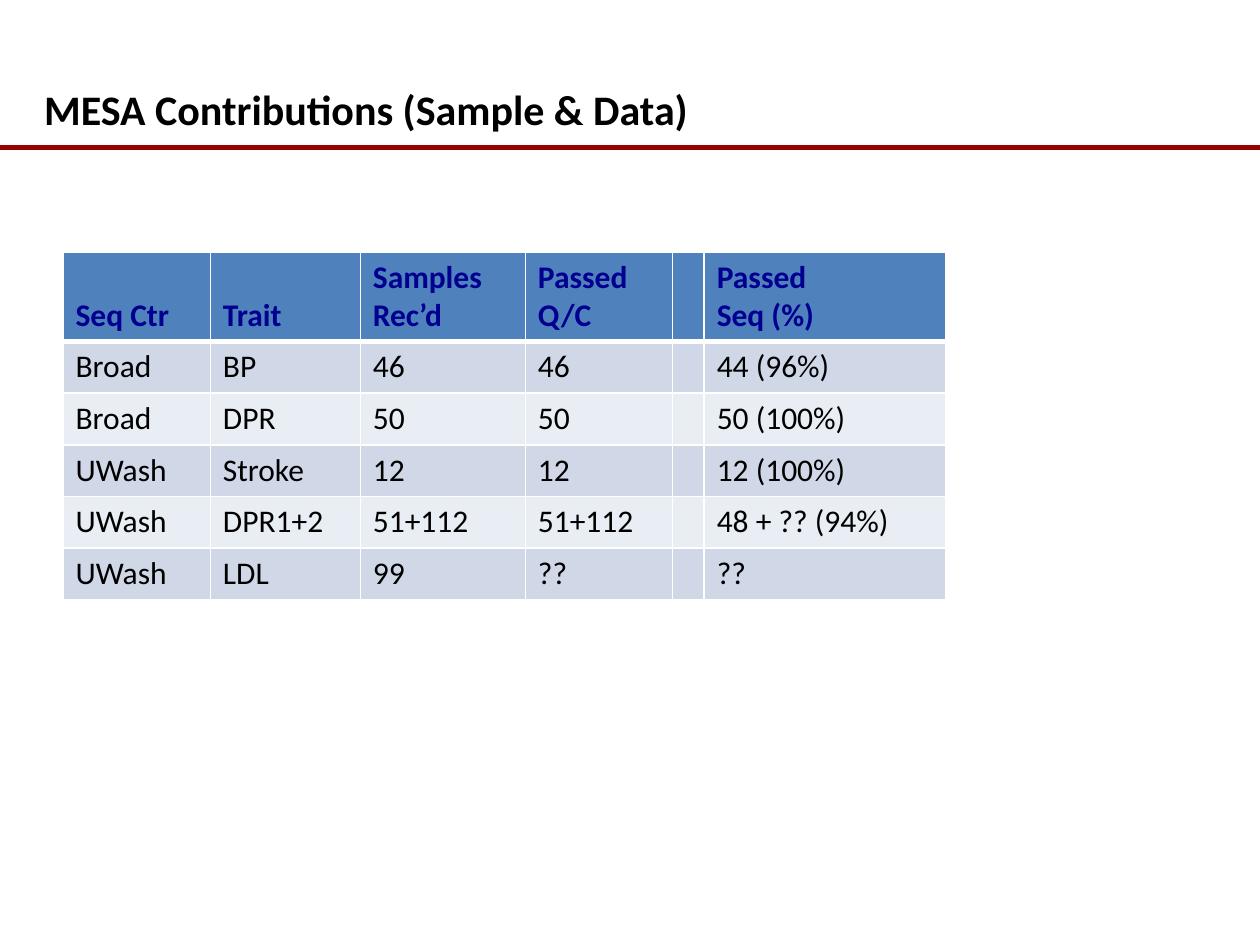
from pptx import Presentation
from pptx.dml.color import RGBColor
from pptx.enum.shapes import MSO_CONNECTOR
from pptx.enum.text import MSO_ANCHOR, PP_ALIGN
from pptx.oxml.ns import qn
from pptx.util import Inches, Pt
from lxml.etree import SubElement

BLACK = RGBColor(0x00, 0x00, 0x00)
WHITE = RGBColor(0xFF, 0xFF, 0xFF)
RED = RGBColor(0x99, 0x00, 0x00)
NAVY = RGBColor(0x00, 0x00, 0x90)
HEADER = RGBColor(0x4F, 0x81, 0xBD)
BANDS = [RGBColor(0xD0, 0xD8, 0xE8), RGBColor(0xE9, 0xED, 0xF4)]
FONT = "Calibri"

COL_WIDTHS = [1.17, 1.19, 1.31, 1.17, 0.25, 1.92]
HEADER_HEIGHT, ROW_HEIGHT = 0.69, 0.41
ROWS = [
    ["Seq Ctr", "Trait", "Samples Rec’d", "Passed Q/C", "", "Passed\nSeq (%)"],
    ["Broad", "BP", "46", "46", "", "44 (96%)"],
    ["Broad", "DPR", "50", "50", "", "50 (100%)"],
    ["UWash", "Stroke", "12", "12", "", "12 (100%)"],
    ["UWash", "DPR1+2", "51+112", "51+112", "", "48 + ?? (94%)"],
    ["UWash", "LDL", "99", "??", "", "??"],
]


def format_text(tf, size, color, bold):
    for p in tf.paragraphs:
        p.alignment = PP_ALIGN.LEFT
        for r in p.runs:
            r.font.name = FONT
            r.font.size = Pt(size)
            r.font.bold = bold
            r.font.color.rgb = color


def set_borders(cell, top, bottom):
    tc_pr = cell._tc.get_or_add_tcPr()
    for tag, width in (("a:lnL", 1), ("a:lnR", 1), ("a:lnT", top), ("a:lnB", bottom)):
        ln = SubElement(tc_pr, qn(tag), w=str(Pt(width)))
        fill = SubElement(ln, qn("a:solidFill"))
        SubElement(fill, qn("a:srgbClr"), val=str(WHITE))


def add_title(s, left, top, width, height):
    title = s.shapes.title
    title.left, title.top = Inches(left), Inches(top)
    title.width, title.height = Inches(width), Inches(height)
    tf = title.text_frame
    tf.text = "MESA Contributions (Sample & Data)"
    tf.word_wrap = True
    tf.vertical_anchor = MSO_ANCHOR.MIDDLE
    format_text(tf, 24, BLACK, True)


def add_rule(s, left, top, width):
    y = Inches(top)
    rule = s.shapes.add_connector(
        MSO_CONNECTOR.STRAIGHT, Inches(left), y, Inches(left + width), y)
    rule.line.color.rgb = RED
    rule.line.width = Pt(3)
    SubElement(rule._element.spPr, qn("a:effectLst"))


def add_samples_table(s, left, top):
    heights = [HEADER_HEIGHT] + [ROW_HEIGHT] * (len(ROWS) - 1)
    table = s.shapes.add_table(
        len(ROWS), len(COL_WIDTHS), Inches(left), Inches(top),
        Inches(sum(COL_WIDTHS)), Inches(sum(heights))).table
    for column, width in zip(table.columns, COL_WIDTHS):
        column.width = Inches(width)
    for i, (values, height) in enumerate(zip(ROWS, heights)):
        table.rows[i].height = Inches(height)
        is_header = i == 0
        for j, value in enumerate(values):
            cell = table.cell(i, j)
            cell.text = value
            set_borders(cell, 3 if i == 1 else 1, 3 if is_header else 1)
            cell.fill.solid()
            cell.fill.fore_color.rgb = HEADER if is_header else BANDS[(i - 1) % 2]
            cell.vertical_anchor = MSO_ANCHOR.BOTTOM if is_header else MSO_ANCHOR.TOP
            format_text(cell.text_frame, 18, NAVY if is_header else BLACK, is_header)


def main():
    prs = Presentation()
    prs.slide_width, prs.slide_height = Inches(10), Inches(7.5)
    s = prs.slides.add_slide(prs.slide_layouts[5])
    add_rule(s, 0, 1.17, 10)
    add_samples_table(s, 0.5, 2)
    add_title(s, 0.25, 0.47, 5.92, 0.78)
    prs.save("out.pptx")


if __name__ == "__main__":
    main()
